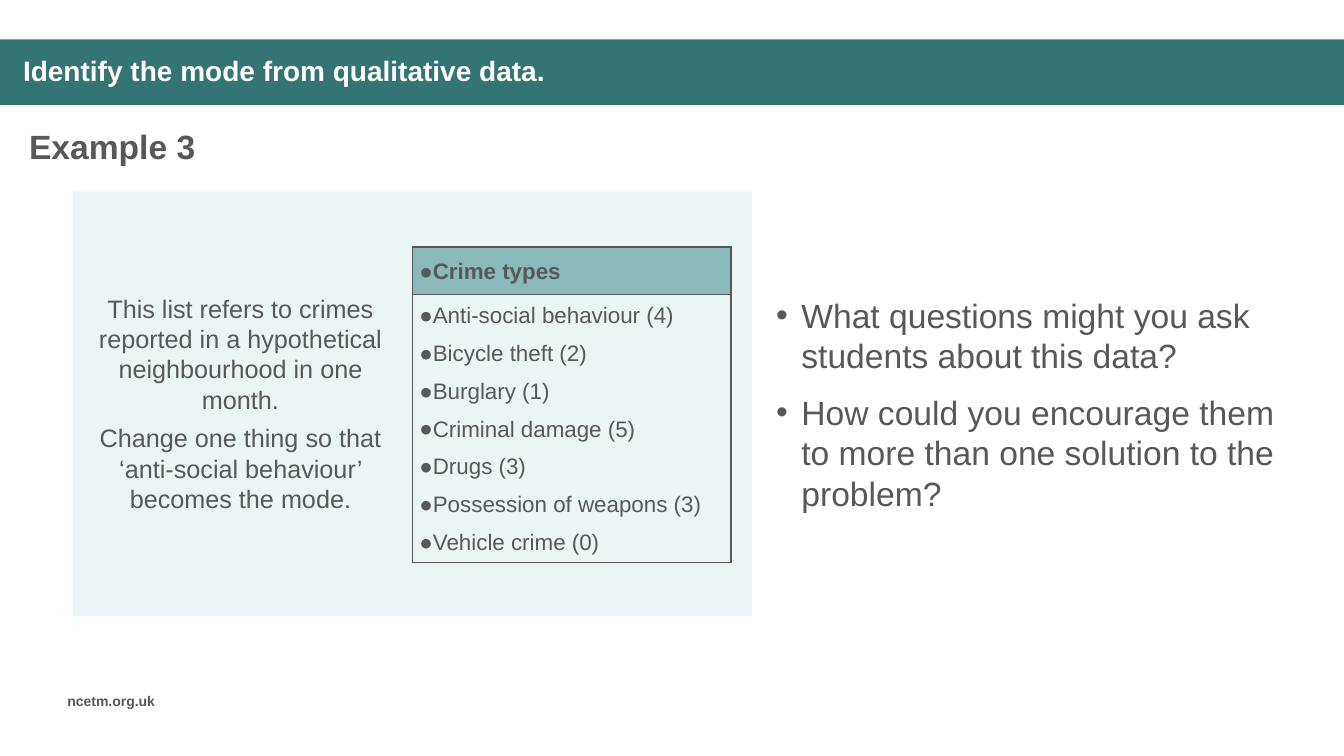
from lxml.etree import SubElement as Sub
from pptx import Presentation
from pptx.dml.color import RGBColor as RGB
from pptx.enum.shapes import MSO_SHAPE as SHAPE
from pptx.enum.text import MSO_ANCHOR as ANCHOR, PP_ALIGN as ALIGN
from pptx.oxml.ns import qn
from pptx.util import Inches, Pt

TEAL = RGB(0x34, 0x75, 0x74)
MINT = RGB(0x8A, 0xB9, 0xB9)
PALE = RGB(0xEB, 0xF5, 0xF5)
GREY = RGB(0x58, 0x58, 0x58)
WHITE = RGB(0xFF, 0xFF, 0xFF)

TASK = [
    "This list refers to crimes reported in a hypothetical neighbourhood in one month.",
    "Change one thing so that ‘anti-social behaviour’ becomes the mode.",
]
CRIMES = [
    "Anti-social behaviour (4)",
    "Bicycle theft (2)",
    "Burglary (1)",
    "Criminal damage (5)",
    "Drugs (3)",
    "Possession of weapons (3)",
    "Vehicle crime (0)",
]
ASKS = [
    "What questions might you ask students about this data?",
    "How could you encourage them to more than one solution to the problem?",
]


def inches(*box):
    """Turn plain numbers into lengths."""
    return [Inches(n) for n in box]


def apply(item, look):
    """Set attributes of an item from a dict."""
    for name, value in look.items():
        setattr(item, name, value)


def write(frame, lines, size, color=GREY, bold=False, mark=None, hang=(0, 0), **look):
    """Fill a text frame with paragraphs of one style."""
    for i, line in enumerate(lines):
        para = frame.add_paragraph() if i else frame.paragraphs[0]
        apply(para, look)
        if not i:
            para.space_before = Pt(0)
        if mark:
            props = para._p.get_or_add_pPr()
            left, first = inches(*hang)
            props.set("marL", str(left))
            props.set("indent", str(first))
            Sub(props, qn("a:buFont")).set("typeface", "Arial")
            Sub(props, qn("a:buChar")).set("char", mark)
        run = para.add_run()
        run.text = line
        apply(run.font, {"name": "Arial", "size": Pt(size), "bold": bold})
        run.font.color.rgb = color


def label(slide, box, lines, size, anchor=ANCHOR.TOP, **look):
    """Add a wrapping text box."""
    frame = slide.shapes.add_textbox(*inches(*box)).text_frame
    apply(frame, {"word_wrap": True, "vertical_anchor": anchor})
    write(frame, lines, size, **look)


def block(slide, box, color):
    """Add a plain filled rectangle."""
    shape = slide.shapes.add_shape(SHAPE.RECTANGLE, *inches(*box))
    shape.shadow.inherit = False
    shape.fill.solid()
    shape.fill.fore_color.rgb = color
    shape.line.fill.background()


def header(slide, x, y, w, h):
    """Draw the title band."""
    block(slide, (x, y, w, h), TEAL)
    label(slide, (x + 0.13, y + 0.09, w - 1.01, h - 0.18),
          ["Identify the mode from qualitative data."], 20, ANCHOR.MIDDLE,
          color=WHITE, bold=True, line_spacing=0.9)


def edge(cell):
    """Outline a cell on all four sides."""
    props = cell._tc.get_or_add_tcPr()
    for i, side in enumerate(("lnL", "lnR", "lnT", "lnB")):
        line = props.makeelement(qn(f"a:{side}"), {"w": str(Pt(1))})
        fill = Sub(line, qn("a:solidFill"))
        Sub(fill, qn("a:srgbClr")).set("val", str(GREY))
        props.insert(i, line)


def crimes(slide, x, y, w, h):
    """Place the table of crime types."""
    table = slide.shapes.add_table(2, 1, *inches(x, y, w, h)).table
    table.columns[0].width = Inches(w)
    head = 0.47
    for row, high in zip(table.rows, (head, h - head)):
        row.height = Inches(high)
    pad = Inches(0.07)
    for i, lines in enumerate((["Crime types"], CRIMES)):
        cell = table.cell(i, 0)
        apply(cell, {"margin_left": pad, "margin_right": pad, "margin_top": 0,
                     "margin_bottom": 0, "vertical_anchor": ANCHOR.MIDDLE})
        cell.fill.solid()
        cell.fill.fore_color.rgb = PALE if i else MINT
        write(cell.text_frame, lines, 16, bold=not i, mark="●",
              line_spacing=1.07, space_before=Pt(4), space_after=Pt(4))
        edge(cell)


def panel(slide, x, y, w, h):
    """Draw the task panel with its table."""
    block(slide, (x, y, w, h), PALE)
    label(slide, (x + 0.15, y + 0.96, 3.03, 2.31), TASK, 18,
          alignment=ALIGN.CENTER, space_after=Pt(6))
    crimes(slide, x + 3.37, y + 0.55, 3.16, 3.12)


def prompts(slide, *box):
    """Place the bulleted questions."""
    label(slide, box, ASKS, 24, ANCHOR.MIDDLE, mark="•", hang=(0.39, -0.25),
          space_after=Pt(12))


def main():
    """Build the slide and save it."""
    deck = Presentation()
    deck.slide_width, deck.slide_height = inches(13.33, 7.5)
    slide = deck.slides.add_slide(deck.slide_layouts[6])
    header(slide, 0, 0.39, 13.33, 0.65)
    label(slide, (0.19, 1.2, 6.66, 0.5), ["Example 3"], 24, bold=True)
    panel(slide, 0.72, 1.9, 6.74, 4.21)
    prompts(slide, 7.46, 1.9, 5.35, 4.21)
    label(slide, (0.57, 6.82, 1.21, 0.27), ["ncetm.org.uk"], 10, bold=True)
    deck.save("out.pptx")


if __name__ == "__main__":
    main()
